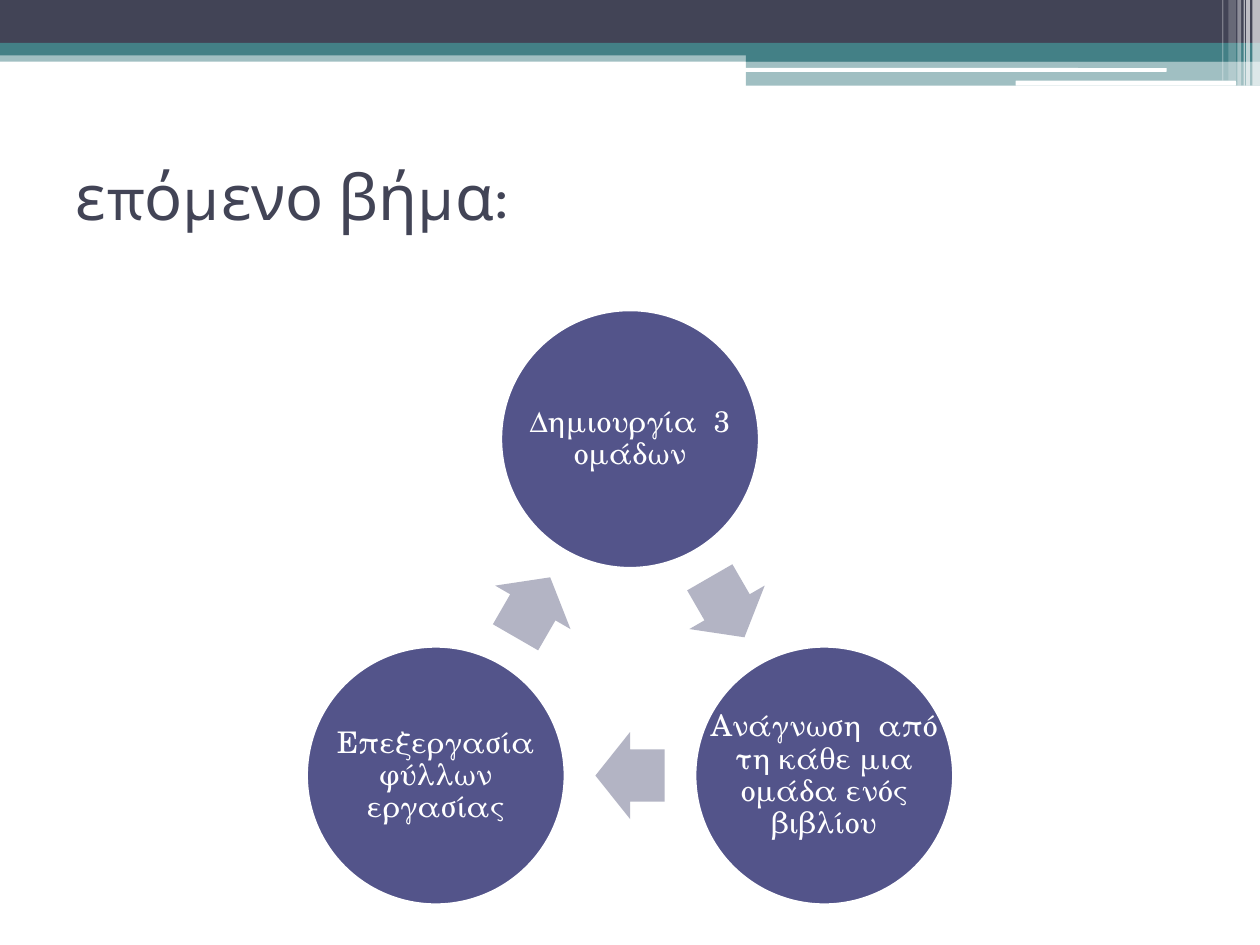
from math import cos, radians, sin
from typing import NamedTuple

from lxml.etree import SubElement
from pptx import Presentation
from pptx.dml.color import RGBColor
from pptx.enum.shapes import MSO_SHAPE as Preset
from pptx.enum.text import MSO_ANCHOR as Anchor, PP_ALIGN as Align
from pptx.oxml.ns import qn
from pptx.util import Emu, Inches, Pt

COLORS = {
    "ink": "424456",
    "teal": "438086",
    "white": "FFFFFF",
    "circle": "53548A",
    "arrow": "B3B4C4",
}
COLUMNS, ROWS = 100, 75
DECK_WIDTH, DECK_HEIGHT = Inches(10), Inches(7.5)


class Area(NamedTuple):
    """A rectangle in grid columns and rows."""
    left: float
    top: float
    width: float
    height: float

    def lengths(self) -> list[Emu]:
        column, row = DECK_WIDTH / COLUMNS, DECK_HEIGHT / ROWS
        return [Emu(round(value * unit))
                for value, unit in zip(self, (column, row, column, row))]


class Bar(NamedTuple):
    area: Area
    color: str
    opacity: int = 100
    preset: Preset = Preset.RECTANGLE


BARS = [
    Bar(Area(0, 4, 100, 0.9), "teal", 50),
    Bar(Area(0, 0, 100, 3.4), "ink"),
    Bar(Area(0, 3.4, 100, 1), "teal"),
    Bar(Area(59.2, 3.9, 40.8, 1), "teal"),
    Bar(Area(59.2, 4.8, 40.8, 2), "teal", 50),
    Bar(Area(59.1, 5.4, 33.5, 0.3), "white", preset=Preset.ROUNDED_RECTANGLE),
    Bar(Area(80.6, 6.4, 17.5, 0.4), "white", preset=Preset.ROUNDED_RECTANGLE),
    Bar(Area(99.4, 0, 0.6, 6.8), "white", 65),
    Bar(Area(98.9, 0, 0.3, 6.8), "white", 65),
    Bar(Area(98.7, 0, 0.1, 6.8), "white", 60),
    Bar(Area(98.2, 0, 0.3, 6.8), "white", 40),
    Bar(Area(97.5, 0, 0.6, 6.4), "white", 20),
    Bar(Area(97, 0, 0.1, 6.4), "white", 30),
]
STEPS = [
    "Δημιουργία  3 ομάδων",
    "Ανάγνωση  από τη κάθε μια ομάδα ενός βιβλίου",
    "Επεξεργασία φύλλων εργασίας",
]
CYCLE_X, CYCLE_Y, CYCLE_RADIUS = 50, 52.65, 17.8
CIRCLE_SIZE = 20.5
ARROW_WIDTH, ARROW_HEIGHT = 5.5, 6.9


def rgb(name: str) -> RGBColor:
    return RGBColor.from_string(COLORS[name])


def add_filled(slide, preset: Preset, area: Area, color: str, opacity: int = 100):
    shape = slide.shapes.add_shape(preset, *area.lengths())
    shape.shadow.inherit = False
    shape.line.fill.background()
    shape.fill.solid()
    shape.fill.fore_color.rgb = rgb(color)
    if opacity < 100:
        tint = shape.fill._xPr.find(f".//{qn('a:srgbClr')}")
        SubElement(tint, qn("a:alpha"), val=str(opacity * 1000))
    return shape


def cycle_area(angle: float, radius: float, width: float, height: float) -> Area:
    """Area centred on the cycle at an angle clockwise from the top."""
    x = CYCLE_X + radius * sin(radians(angle))
    y = CYCLE_Y - radius * cos(radians(angle))
    return Area(x - width / 2, y - height / 2, width, height)


def add_step(slide, text: str, angle: float) -> None:
    area = cycle_area(angle, CYCLE_RADIUS, CIRCLE_SIZE, CIRCLE_SIZE)
    circle = add_filled(slide, Preset.OVAL, area, "circle")
    circle.line.color.rgb = rgb("white")
    circle.line.width = Pt(1.5)

    frame = slide.shapes.add_textbox(*area.lengths()).text_frame
    frame.word_wrap = True
    frame.vertical_anchor = Anchor.MIDDLE
    frame.margin_left = frame.margin_right = Inches(0.02)
    frame.margin_top = frame.margin_bottom = Inches(0.02)
    para = frame.paragraphs[0]
    para.text = text
    para.alignment = Align.CENTER
    para.line_spacing = 0.9
    para.font.name = "TeX Gyre Schola"
    para.font.size = Pt(17)
    para.font.color.rgb = rgb("white")


def add_arrow(slide, angle: float) -> None:
    area = cycle_area(angle, CYCLE_RADIUS / 2, ARROW_WIDTH, ARROW_HEIGHT)
    arrow = add_filled(slide, Preset.RIGHT_ARROW, area, "arrow")
    arrow.adjustments[0] = 0.6
    arrow.adjustments[1] = 0.5
    arrow.rotation = angle


def set_title(slide, text: str) -> None:
    title = slide.shapes.title
    title.left, title.top, title.width, title.height = Area(5, 12.5, 90, 11.7).lengths()
    frame = title.text_frame
    frame.vertical_anchor = Anchor.TOP
    frame.margin_top = 0
    para = frame.paragraphs[0]
    para.text = text
    para.alignment = Align.LEFT
    para.font.name = "Karla"
    para.font.size = Pt(36)
    para.font.color.rgb = rgb("ink")


def main() -> None:
    deck = Presentation()
    deck.slide_width, deck.slide_height = DECK_WIDTH, DECK_HEIGHT
    slide = deck.slides.add_slide(deck.slide_layouts[5])
    for bar in BARS:
        add_filled(slide, bar.preset, bar.area, bar.color, bar.opacity)
    set_title(slide, "επόμενο βήμα:")
    turn = 360 / len(STEPS)
    for index, text in enumerate(STEPS):
        add_step(slide, text, index * turn)
        add_arrow(slide, (index + 0.5) * turn)
    deck.save("out.pptx")


if __name__ == "__main__":
    main()
